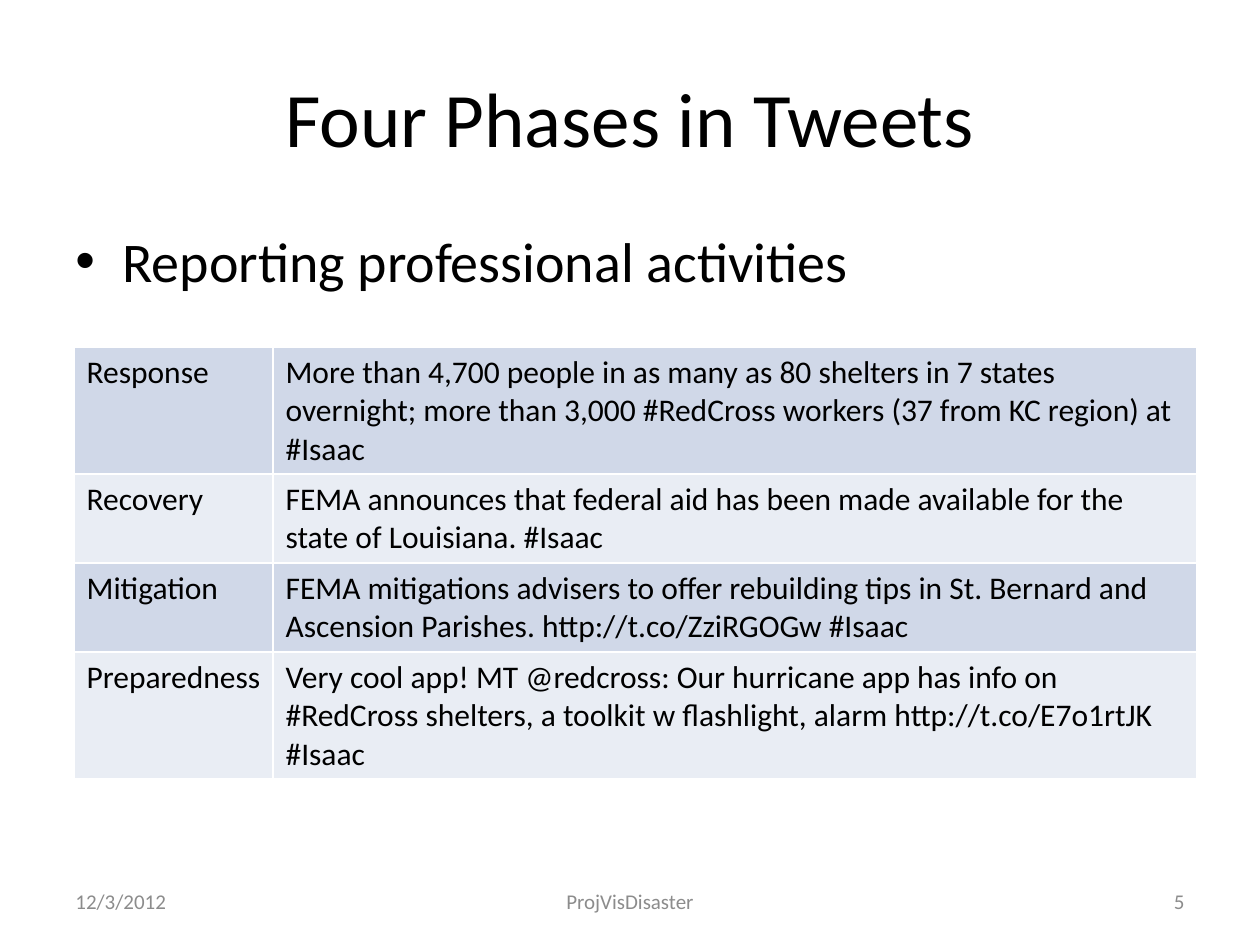
from lxml.etree import SubElement
from pptx import Presentation
from pptx.dml.color import RGBColor
from pptx.enum.text import MSO_ANCHOR, PP_ALIGN
from pptx.oxml.ns import qn
from pptx.util import Emu, Pt

SCALE = 914400 / 126
FONT = "Calibri"
COLORS = {
    "text": "000000",
    "footer": "8C8C8C",
    "border": "FFFFFF",
    "dark band": "D0D8E8",
    "light band": "E9EDF4",
}
TITLE = {"size": Pt(44), "name": FONT}
BODY = {"size": Pt(32), "name": FONT}
CELL = {"size": Pt(18), "name": FONT}
FOOTER = {"size": Pt(12), "name": FONT}
PHASES = [
    ("Response", "More than 4,700 people in as many as 80 shelters in 7 states overnight; "
     "more than 3,000 #RedCross workers (37 from KC region) at #Isaac"),
    ("Recovery", "FEMA announces that federal aid has been made available for the "
     "state of Louisiana. #Isaac"),
    ("Mitigation", "FEMA mitigations advisers to offer rebuilding tips in St. Bernard and "
     "Ascension Parishes. http://t.co/ZziRGOGw #Isaac"),
    ("Preparedness", "Very cool app! MT @redcross: Our hurricane app has info on #RedCross "
     "shelters, a toolkit w flashlight, alarm http://t.co/E7o1rtJK #Isaac"),
]


def px(length):
    """Turn pixels into EMU."""
    return Emu(round(length * SCALE))


def write(para, text, style, color="text"):
    """Write one formatted span into a paragraph."""
    span = para.add_run()
    span.text = text
    for key, value in style.items():
        setattr(span.font, key, value)
    span.font.color.rgb = RGBColor.from_string(COLORS[color])


def add_text(page, box, text, style, align=PP_ALIGN.LEFT, anchor=MSO_ANCHOR.MIDDLE, color="text"):
    """Add a wrapped text box and return its paragraph."""
    frame = page.shapes.add_textbox(*map(px, box)).text_frame
    frame.word_wrap = True
    frame.vertical_anchor = anchor
    para = frame.paragraphs[0]
    para.alignment = align
    write(para, text, style, color)
    return para


def add_bullet(page, box, text):
    """Add a bulleted line with a hanging indent."""
    para = add_text(page, box, text, BODY, anchor=MSO_ANCHOR.TOP)
    props = para._p.get_or_add_pPr()
    props.set("marL", str(px(47)))
    props.set("indent", str(-px(47)))
    SubElement(props, qn("a:buFont"), typeface="Arial")
    SubElement(props, qn("a:buChar"), char="•")


def add_borders(cell):
    """Draw a thin line on each side of a cell."""
    props = cell._tc.get_or_add_tcPr()
    for index, side in enumerate(("lnL", "lnR", "lnT", "lnB")):
        line = props.makeelement(qn(f"a:{side}"), {"w": str(Pt(1))})
        fill = SubElement(line, qn("a:solidFill"))
        SubElement(fill, qn("a:srgbClr"), val=COLORS["border"])
        props.insert(index, line)


def add_phases(page, box, columns, heights):
    """Add the banded table of phases and tweets."""
    table = page.shapes.add_table(len(PHASES), len(columns), *map(px, box)).table
    table.first_row = table.horz_banding = False
    for column, width in zip(table.columns, columns):
        column.width = px(width)
    for index, (row, height, texts) in enumerate(zip(table.rows, heights, PHASES)):
        row.height = px(height)
        band = "light band" if index % 2 else "dark band"
        for cell, text in zip(row.cells, texts):
            cell.fill.solid()
            cell.fill.fore_color.rgb = RGBColor.from_string(COLORS[band])
            add_borders(cell)
            write(cell.text_frame.paragraphs[0], text, CELL)


def add_footer(page, box):
    """Add the date, project name and page number along the bottom."""
    left, top, width, height = box
    parts = [
        (0, 294, "12/3/2012", PP_ALIGN.LEFT),
        ((width - 400) // 2, 400, "ProjVisDisaster", PP_ALIGN.CENTER),
        (width - 294, 294, "5", PP_ALIGN.RIGHT),
    ]
    for offset, span_width, text, align in parts:
        add_text(page, (left + offset, top, span_width, height), text, FOOTER, align, color="footer")


def main():
    """Build and save the deck."""
    deck = Presentation()
    deck.slide_width, deck.slide_height = px(1260), px(945)
    page = deck.slides.add_slide(deck.slide_layouts[6])
    add_text(page, (63, 38, 1134, 157), "Four Phases in Tweets", TITLE, PP_ALIGN.CENTER)
    add_bullet(page, (63, 220, 1134, 624), "Reporting professional activities")
    add_footer(page, (63, 876, 1134, 50))
    add_phases(page, (74, 347, 1123, 432), (199, 924), (127, 89, 89, 127))
    deck.save("out.pptx")


if __name__ == "__main__":
    main()
